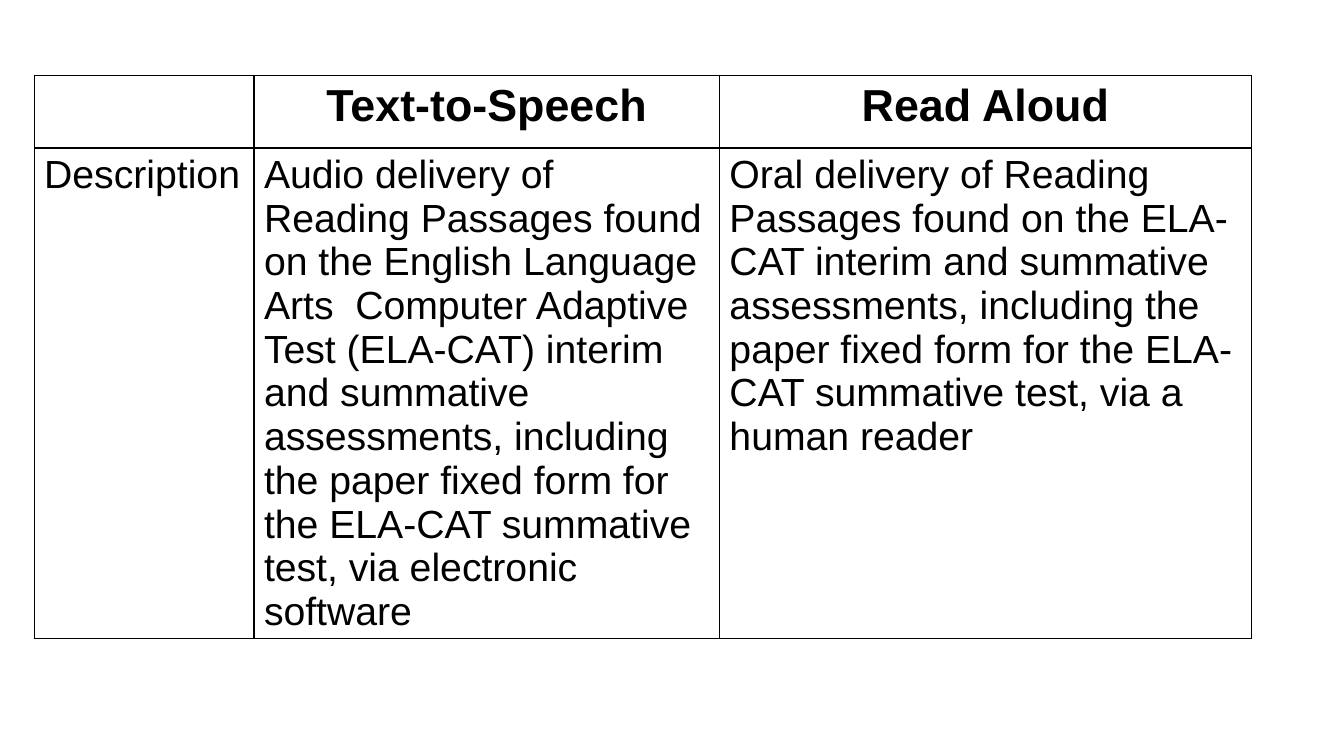
from dataclasses import dataclass
from lxml.etree import SubElement
from pptx import Presentation
from pptx.dml.color import RGBColor
from pptx.enum.text import PP_ALIGN
from pptx.oxml.ns import qn
from pptx.util import Cm, Pt


@dataclass(frozen=True)
class Theme:
    font: str = "Arial"
    ink: str = "000000"
    paper: str = "FFFFFF"
    head: int = 32
    body: int = 28
    rule: int = 1


class Page:
    def __init__(self, slide, theme):
        self.slide = slide
        self.theme = theme

    def table(self, left, top, widths, heights, rows):
        frame = self.slide.shapes.add_table(
            len(rows), len(widths), Cm(left), Cm(top),
            Cm(sum(widths)), Cm(sum(heights)))
        grid = frame.table
        grid.first_row = grid.horz_banding = False
        for col, width in zip(grid.columns, widths):
            col.width = Cm(width)
        for row, height in zip(grid.rows, heights):
            row.height = Cm(height)
        for i, texts in enumerate(rows):
            for j, text in enumerate(texts):
                self.cell(grid.cell(i, j), text, i == 0)

    def cell(self, cell, text, head):
        self.border(cell)
        cell.fill.solid()
        cell.fill.fore_color.rgb = RGBColor.from_string(self.theme.paper)
        if text:
            self.label(cell.text_frame.paragraphs[0], text, head)

    def border(self, cell):
        props = cell._tc.get_or_add_tcPr()
        for side in ("lnL", "lnR", "lnT", "lnB"):
            line = SubElement(props, qn(f"a:{side}"), w=str(Pt(self.theme.rule)))
            fill = SubElement(line, qn("a:solidFill"))
            SubElement(fill, qn("a:srgbClr"), val=self.theme.ink)

    def label(self, para, text, head):
        para.alignment = PP_ALIGN.CENTER if head else PP_ALIGN.LEFT
        run = para.add_run()
        run.text = text
        font = run.font
        font.name = self.theme.font
        font.size = Pt(self.theme.head if head else self.theme.body)
        font.bold = head
        font.color.rgb = RGBColor.from_string(self.theme.ink)


def main():
    deck = Presentation()
    deck.slide_width, deck.slide_height = Cm(33.87), Cm(19.05)
    page = Page(deck.slides.add_slide(deck.slide_layouts[6]), Theme())
    page.table(0.86, 1.9, (5.54, 11.73, 13.41), (1.83, 9.3), (
        ("", "Text-to-Speech", "Read Aloud"),
        ("Description",
         "Audio delivery of Reading Passages found on the English Language "
         "Arts  Computer Adaptive Test (ELA-CAT) interim and summative "
         "assessments, including the paper fixed form for the ELA-CAT "
         "summative test, via electronic software",
         "Oral delivery of Reading Passages found on the ELA-CAT interim and "
         "summative assessments, including the paper fixed form for the "
         "ELA-CAT summative test, via a human reader"),
    ))
    deck.save("out.pptx")


if __name__ == "__main__":
    main()
